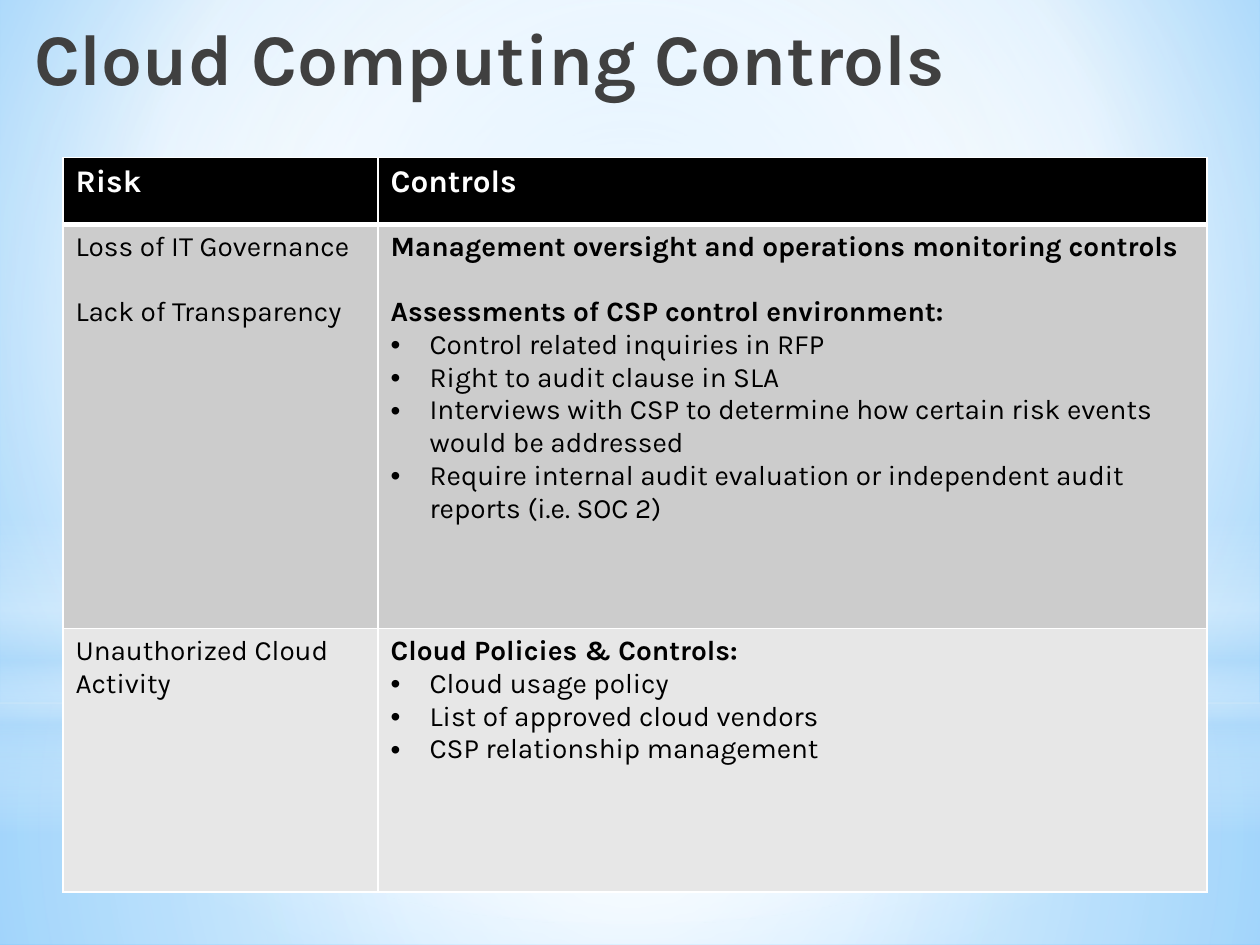
from lxml import etree
from pptx import Presentation, util as u
from pptx.dml.color import RGBColor
from pptx.enum import shapes, text
from pptx.oxml import parse_xml
from pptx.oxml.ns import nsdecls, qn

FONT = "Karla"
TITLE = "Cloud Computing Controls"
HEADINGS = ["Risk", "Controls"]
RISKS = [
    (["Loss of IT Governance", "Lack of Transparency"],
     [("Management oversight and operations monitoring controls", []),
      ("Assessments of CSP control environment:",
       ["Control related inquiries in RFP",
        "Right to audit clause in SLA",
        "Interviews with CSP to determine how certain risk events would be addressed",
        "Require internal audit evaluation or independent audit reports (i.e. SOC 2)"])]),
    (["Unauthorized Cloud Activity"],
     [("Cloud Policies & Controls:",
       ["Cloud usage policy",
        "List of approved cloud vendors",
        "CSP relationship management"])]),
]
COLUMNS = [2.5, 6.58]
ROWS = [0.53, 3.21, 2.09]
ROW_FILLS = ["000000", "CCCCCC", "E7E7E7"]
GROUP_GAP = 18.7

CENTRE = (50, 50, 50, 50)
BACKDROP = [(0, "9ED5FF", 100), (60, "FFFFFF", 100), (100, "5BB9FF", 100)]
RECT, OVAL = shapes.MSO_SHAPE.RECTANGLE, shapes.MSO_SHAPE.OVAL
GLOWS = [
    (RECT, 5.58, 1.92, CENTRE,
     [(0, "FFFFFF", 91), (37, "FFFFFF", 76), (100, "B4DCFA", 79)]),
    (RECT, 0, 5.58, CENTRE,
     [(0, "FFFFFF", 89), (48, "FFFFFF", 62), (100, "B4DCFA", 79)]),
    (RECT, 4.12, 2.5, None,
     [(0, "FFFFFF", 0), (29, "FFFFFF", 30), (45, "B4DCFA", 40),
      (55, "FFFFFF", 26), (65, "B4DCFA", 60), (100, "FFFFFF", 0)]),
    (OVAL, 1.75, 5.58, CENTRE, [(0, "FFFFFF", 100), (56, "FFFFFF", 0)]),
]


def rgb(colour):
    return RGBColor.from_string(colour)


def paint_gradient(owner, fill, stops, focus):
    fill.solid()
    fill.fore_color.rgb = rgb("FFFFFF")
    solid = owner.find(".//" + qn("a:solidFill"))
    marks = "".join(
        f'<a:gs pos="{pos * 1000}"><a:srgbClr val="{colour}">'
        f'<a:alpha val="{opacity * 1000}"/></a:srgbClr></a:gs>'
        for pos, colour, opacity in stops)
    if focus:
        edges = " ".join(f'{side}="{value * 1000}"' for side, value in zip("ltrb", focus))
        direction = f'<a:path path="circle"><a:fillToRect {edges}/></a:path>'
    else:
        direction = '<a:lin ang="5400000" scaled="0"/>'
    solid.getparent().replace(solid, parse_xml(
        f'<a:gradFill {nsdecls("a")} rotWithShape="1"><a:gsLst>{marks}</a:gsLst>'
        f'{direction}</a:gradFill>'))


def style(paragraph, size, colour, bold):
    for run in paragraph.runs:
        run.font.name = FONT
        run.font.size = u.Pt(size)
        run.font.bold = bold
        run.font.color.rgb = rgb(colour)


def add_bullet(paragraph):
    props = paragraph._p.get_or_add_pPr()
    props.set("marL", str(u.Inches(0.31)))
    props.set("indent", str(-u.Inches(0.31)))
    etree.SubElement(props, qn("a:buFont")).set("typeface", "Arial")
    etree.SubElement(props, qn("a:buChar")).set("char", "•")


def add_borders(cell, widths):
    props = cell._tc.get_or_add_tcPr()
    for position, (side, width) in enumerate(widths.items()):
        props.insert(position, parse_xml(
            f'<a:ln{side} {nsdecls("a")} w="{u.Pt(width)}"><a:solidFill>'
            f'<a:srgbClr val="FFFFFF"/></a:solidFill></a:ln{side}>'))


def fill_cell(cell, lines, size, colour):
    cell.text_frame.text = "\n".join(line for line, *_ in lines)
    for paragraph, (_, bold, bulleted, gap) in zip(cell.text_frame.paragraphs, lines):
        paragraph.space_before = u.Pt(gap)
        style(paragraph, size, colour, bold)
        if bulleted:
            add_bullet(paragraph)


def control_lines(groups):
    lines = []
    for heading, points in groups:
        lines.append((heading, True, False, GROUP_GAP if lines else 0))
        lines += [(point, False, True, 0) for point in points]
    return lines


def risk_lines(risks):
    return [(risk, False, False, GROUP_GAP if i else 0) for i, risk in enumerate(risks)]


def main():
    deck = Presentation()
    deck.slide_width, deck.slide_height = u.Inches(10), u.Inches(7.5)
    slide = deck.slides.add_slide(deck.slide_layouts[5])
    paint_gradient(slide._element, slide.background.fill, BACKDROP, (20, 10, 20, 60))

    for kind, top, height, focus, stops in GLOWS:
        glow = slide.shapes.add_shape(
            kind, 0, u.Inches(top), deck.slide_width, u.Inches(height))
        glow.shadow.inherit = False
        glow.line.fill.background()
        paint_gradient(glow._element, glow.fill, stops, focus)

    title = slide.shapes.title
    slide.shapes._spTree.append(title._element)
    title.left, title.top = u.Inches(0.17), 0
    title.width, title.height = u.Inches(9), u.Inches(1.25)
    title.text_frame.text = TITLE
    title.text_frame.margin_top = u.Inches(0.1)
    title.text_frame.vertical_anchor = text.MSO_ANCHOR.TOP
    title.text_frame.auto_size = text.MSO_AUTO_SIZE.NONE
    heading = title.text_frame.paragraphs[0]
    heading.alignment = text.PP_ALIGN.LEFT
    style(heading, 41.4, "404040", True)

    table = slide.shapes.add_table(
        len(ROWS), len(COLUMNS), u.Inches(0.5), u.Inches(1.25),
        u.Inches(sum(COLUMNS)), u.Inches(sum(ROWS))).table
    for column, width in zip(table.columns, COLUMNS):
        column.width = u.Inches(width)
    for row, height in zip(table.rows, ROWS):
        row.height = u.Inches(height)

    content = [[[(name, True, False, 0)] for name in HEADINGS]]
    content += [[risk_lines(risks), control_lines(groups)] for risks, groups in RISKS]
    for r, (row, fill) in enumerate(zip(content, ROW_FILLS)):
        size, colour = (16, "000000") if r else (18, "FFFFFF")
        for c, lines in enumerate(row):
            cell = table.cell(r, c)
            cell.fill.solid()
            cell.fill.fore_color.rgb = rgb(fill)
            add_borders(cell, {"L": 1, "R": 1, "T": 3 if r == 1 else 1,
                               "B": 1 if r else 3})
            fill_cell(cell, lines, size, colour)

    deck.save("out.pptx")


if __name__ == "__main__":
    main()
